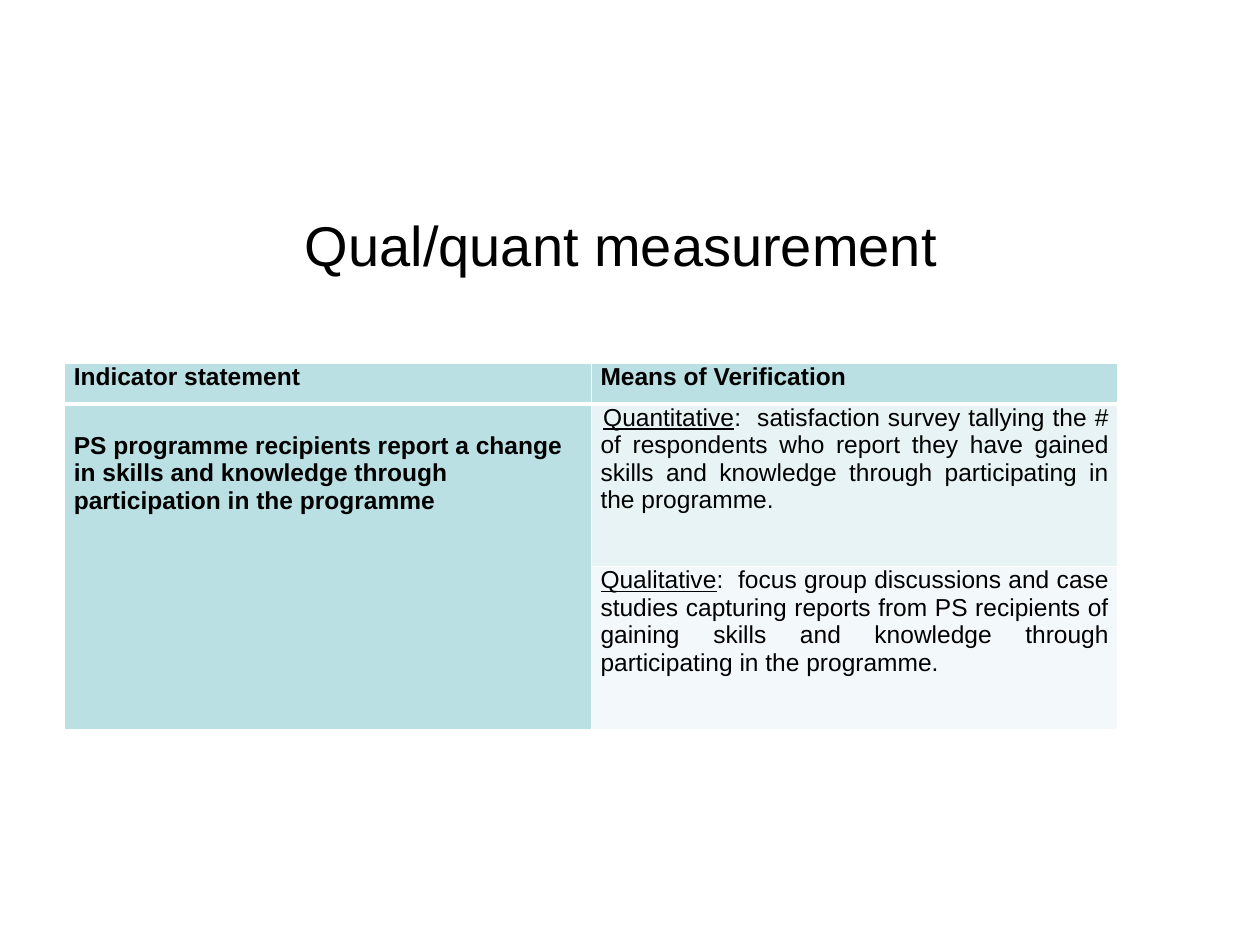
"""Build the qualitative and quantitative measurement slide."""

from dataclasses import dataclass

from lxml import etree
from pptx import Presentation
from pptx.dml.color import RGBColor
from pptx.enum.text import MSO_ANCHOR, PP_ALIGN
from pptx.oxml.ns import qn
from pptx.slide import Slide
from pptx.table import Table, _Cell
from pptx.util import Pt

LEFT, CENTER, JUSTIFY = PP_ALIGN.LEFT, PP_ALIGN.CENTER, PP_ALIGN.JUSTIFY
TOP, MIDDLE = MSO_ANCHOR.TOP, MSO_ANCHOR.MIDDLE

BLACK = RGBColor(0x00, 0x00, 0x00)
WHITE = RGBColor(0xFF, 0xFF, 0xFF)
TEAL = RGBColor(0xBB, 0xE0, 0xE3)
PALE_TEAL = RGBColor(0xE7, 0xF3, 0xF4)
FAINT_TEAL = RGBColor(0xF3, 0xF9, 0xFA)

FONT = "Arial"
BODY_SIZE = Pt(14)
SIDE_MARGIN = Pt(5.2)
COLUMN_WIDTH = Pt(301)
ROW_HEIGHTS = (Pt(23.3), Pt(93), Pt(93))
THIN, THICK = Pt(1), Pt(3)


@dataclass(frozen=True)
class CellText:
    row: int
    column: int
    text: str
    fill: RGBColor
    term: str = ""
    bold: bool = False
    align: PP_ALIGN = JUSTIFY
    top_margin: Pt = Pt(0)
    indent: Pt = Pt(0)


CELLS = (
    CellText(0, 0, "Indicator statement", TEAL, bold=True),
    CellText(0, 1, "Means of Verification", TEAL, bold=True),
    CellText(
        1, 0,
        "PS programme recipients report a change in skills and knowledge "
        "through participation in the programme",
        TEAL, bold=True, align=LEFT, top_margin=Pt(16),
    ),
    CellText(
        1, 1,
        ":  satisfaction survey tallying the # of respondents who report they "
        "have gained skills and knowledge through participating in the programme.",
        PALE_TEAL, term="Quantitative", indent=Pt(1.5),
    ),
    CellText(
        2, 1,
        ":  focus group discussions and case studies capturing reports from PS "
        "recipients of gaining skills and knowledge through participating in the programme.",
        FAINT_TEAL, term="Qualitative",
    ),
)


def set_borders(cell: _Cell, top: Pt, bottom: Pt) -> None:
    """Give a cell white borders."""
    properties = cell._tc.get_or_add_tcPr()
    for side, width in (("L", THIN), ("R", THIN), ("T", top), ("B", bottom)):
        line = etree.SubElement(properties, qn(f"a:ln{side}"), w=str(int(width)))
        fill = etree.SubElement(line, qn("a:solidFill"))
        etree.SubElement(fill, qn("a:srgbClr"), val=str(WHITE))


def fill_cell(table: Table, content: CellText) -> None:
    """Write and colour one table cell."""
    cell = table.cell(content.row, content.column)
    cell.margin_left = cell.margin_right = SIDE_MARGIN
    cell.margin_top, cell.margin_bottom = content.top_margin, Pt(0)
    cell.vertical_anchor = TOP
    cell.fill.solid()
    cell.fill.fore_color.rgb = content.fill
    para = cell.text_frame.paragraphs[0]
    para.alignment = content.align
    if content.indent:
        para._p.get_or_add_pPr().set("indent", str(int(content.indent)))
    para.font.name, para.font.size = FONT, BODY_SIZE
    para.font.bold = content.bold
    para.font.color.rgb = BLACK
    if content.term:
        span = para.add_run()
        span.text = content.term
        span.font.underline = True
    para.add_run().text = content.text


def add_title(page: Slide) -> None:
    """Add the centred slide title."""
    box = page.shapes.add_textbox(Pt(31), Pt(94.5), Pt(648), Pt(90))
    frame = box.text_frame
    frame.word_wrap = True
    frame.vertical_anchor = MIDDLE
    para = frame.paragraphs[0]
    para.text = "Qual/quant measurement"
    para.alignment = CENTER
    para.font.name, para.font.size = FONT, Pt(32)
    para.font.color.rgb = BLACK


def add_indicator_table(page: Slide) -> None:
    """Add the table of indicators and means of verification."""
    table = page.shapes.add_table(
        len(ROW_HEIGHTS), 2, Pt(37), Pt(207.5), 2 * COLUMN_WIDTH, sum(ROW_HEIGHTS)
    ).table
    table.horz_banding = False
    for column in table.columns:
        column.width = COLUMN_WIDTH
    for index, (row, height) in enumerate(zip(table.rows, ROW_HEIGHTS)):
        row.height = height
        for cell in row.cells:
            set_borders(
                cell,
                top=THICK if index == 1 else THIN,
                bottom=THICK if index == 0 else THIN,
            )
    table.cell(1, 0).merge(table.cell(2, 0))
    for content in CELLS:
        fill_cell(table, content)


def main() -> None:
    """Build and save the deck."""
    deck = Presentation()
    deck.slide_width, deck.slide_height = Pt(720), Pt(540)
    page = deck.slides.add_slide(deck.slide_layouts[6])
    add_title(page)
    add_indicator_table(page)
    deck.save("out.pptx")


if __name__ == "__main__":
    main()
